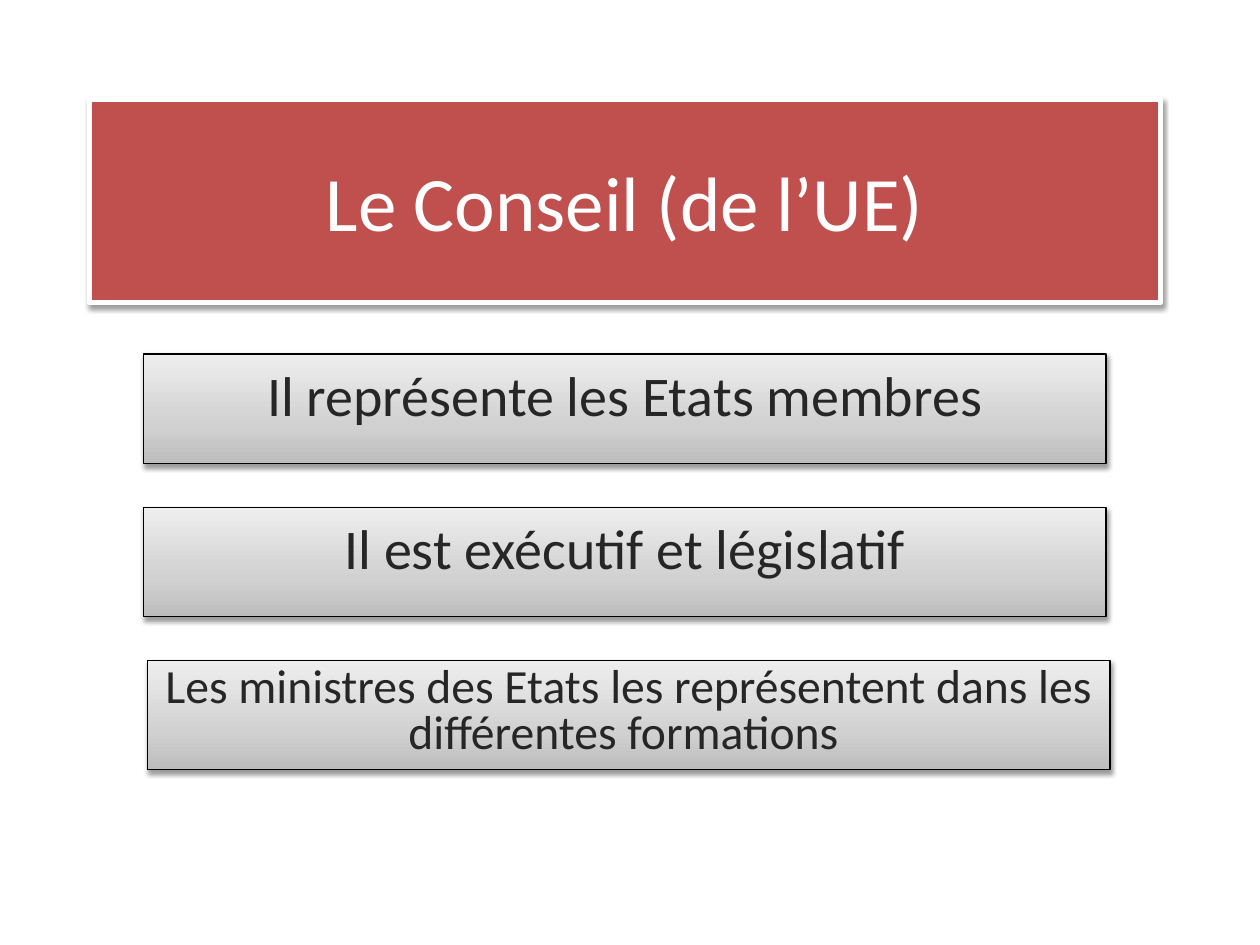
from copy import deepcopy
from dataclasses import dataclass

from pptx import Presentation
from pptx.dml.color import RGBColor
from pptx.enum.shapes import MSO_SHAPE
from pptx.enum.text import MSO_ANCHOR, PP_ALIGN
from pptx.oxml import parse_xml
from pptx.oxml.ns import nsdecls, qn
from pptx.util import Cm, Pt


@dataclass(frozen=True)
class Theme:
    font: str = "Calibri"
    red: str = "C0504D"
    white: str = "FFFFFF"
    black: str = "000000"
    ink: str = "262626"
    greys: tuple = ((0, "BDBDBD"), (0.35, "D1D1D1"), (1, "EEEEEE"))
    title: float = 44
    body: float = 32
    small: float = 27.2


THEME = Theme()


def color(code):
    return RGBColor.from_string(code)


def add_shade(shape):
    """Give the shape a soft shadow straight below it."""
    shape.shadow.inherit = False
    effects = shape._element.spPr.find(qn("a:effectLst"))
    effects.append(parse_xml(
        f'<a:outerShdw {nsdecls("a")} blurRad="{Pt(3.1)}" dist="{Pt(1.6)}" '
        f'dir="5400000" rotWithShape="0"><a:srgbClr val="{THEME.black}">'
        '<a:alpha val="38000"/></a:srgbClr></a:outerShdw>'))


def fill_grey(shape):
    """Fill with the grey gradient, dark at the bottom."""
    fill = shape.fill
    fill.gradient()
    fill.gradient_angle = 90
    stops = shape._element.spPr.find(qn("a:gradFill")).find(qn("a:gsLst"))
    stops.append(deepcopy(stops[-1]))
    for stop, (place, code) in zip(fill.gradient_stops, THEME.greys):
        stop.position = place
        stop.color.rgb = color(code)


def add_box(slide, place, text, size, ink, edge, width):
    shape = slide.shapes.add_shape(
        MSO_SHAPE.RECTANGLE, *(Cm(part) for part in place))
    shape.line.color.rgb = color(edge)
    shape.line.width = Pt(width)
    add_shade(shape)
    frame = shape.text_frame
    frame.word_wrap = True
    frame.text = text
    para = frame.paragraphs[0]
    para.alignment = PP_ALIGN.CENTER
    font = para.runs[0].font
    font.name = THEME.font
    font.size = Pt(size)
    font.color.rgb = color(ink)
    return shape


def add_title(slide, text):
    shape = add_box(slide, (1.8, 2, 21.6, 4.1), text,
                    THEME.title, THEME.white, THEME.white, 3)
    shape.fill.solid()
    shape.fill.fore_color.rgb = color(THEME.red)
    shape.text_frame.vertical_anchor = MSO_ANCHOR.MIDDLE


def add_point(slide, left, top, text, size, pitch=None):
    shape = add_box(slide, (left, top, 19.4, 2.2), text,
                    size, THEME.ink, THEME.black, 0.75)
    fill_grey(shape)
    frame = shape.text_frame
    frame.vertical_anchor = MSO_ANCHOR.TOP
    if pitch:
        frame.paragraphs[0].line_spacing = pitch


def main():
    deck = Presentation()
    deck.slide_width, deck.slide_height = Cm(25.4), Cm(19.05)
    slide = deck.slides.add_slide(deck.slide_layouts[6])
    add_title(slide, "Le Conseil (de l’UE)")
    points = (
        (2.9, "Il représente les Etats membres", THEME.body, None),
        (2.9, "Il est exécutif et législatif", THEME.body, None),
        (2.98, "Les ministres des Etats les représentent dans les "
               "différentes formations ", THEME.small, 0.8),
    )
    for row, (left, *rest) in enumerate(points):
        add_point(slide, left, 7.14 + 3.09 * row, *rest)
    deck.save("out.pptx")


if __name__ == "__main__":
    main()
